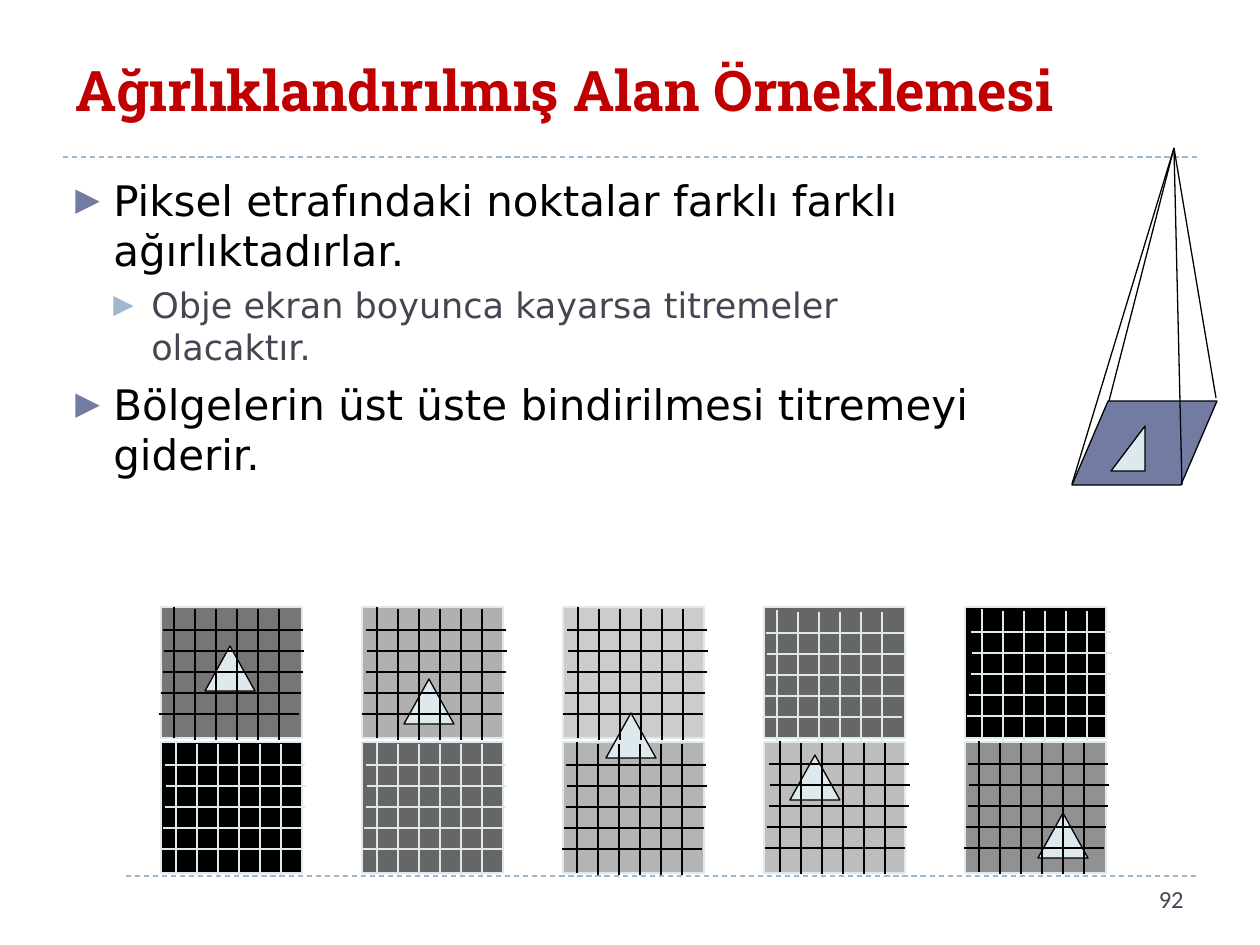
from dataclasses import dataclass

from lxml import etree
from pptx import Presentation
from pptx.dml.color import RGBColor
from pptx.enum.dml import MSO_LINE
from pptx.enum.shapes import MSO_CONNECTOR, MSO_SHAPE
from pptx.enum.text import MSO_ANCHOR, PP_ALIGN
from pptx.oxml.ns import qn
from pptx.util import Pt

PX = 914400 / 126
STRAIGHT = MSO_CONNECTOR.STRAIGHT
RECTANGLE = MSO_SHAPE.RECTANGLE
TRIANGLE = MSO_SHAPE.ISOSCELES_TRIANGLE
PARALLELOGRAM = MSO_SHAPE.PARALLELOGRAM
DASH = MSO_LINE.DASH
TOP = MSO_ANCHOR.TOP
MIDDLE = MSO_ANCHOR.MIDDLE
LEFT = PP_ALIGN.LEFT
RIGHT = PP_ALIGN.RIGHT


@dataclass(frozen=True)
class Theme:
    black: str = "000000"
    pale: str = "DDE9EC"
    red: str = "C00000"
    slate: str = "464653"
    indigo: str = "727CA3"
    sky: str = "9FB8CD"
    title_font: str = "Roboto Slab"
    body_font: str = "DejaVu Sans"
    number_font: str = "Calibri"
    title_size: int = 32
    body_size: int = 24
    detail_size: int = 20
    number_size: int = 14
    stroke: float = 0.75


THEME = Theme()

CELL_LEFT, CELL_STEP, CELL_WIDTH, CELL_HEIGHT = 161, 201, 141, 131
UPPER_ROW, LOWER_ROW = 607, 742
GRID_STEP = 21

UPPER_FILLS = [("767676", 100), ("969696", 75), ("CCCCCC", 100), ("000000", 60), ("000000", 100)]
LOWER_FILLS = [("000000", 100), ("000000", 60), ("B4B4B4", 100), ("A7A7A7", 75), ("919191", 100)]
MOVING_OBJECT = [(205, 646), (404, 679), (606, 713), (790, 755), (1038, 813)]
DARK_GRIDS = [(174, 607), (377, 607), (578, 607), (780, 741), (979, 741), (577, 742)]
PALE_GRIDS = [(377, 742), (176, 742), (777, 610), (982, 609)]

BULLETS = [
    ("Piksel etrafındaki noktalar farklı farklı ağırlıktadırlar.", 0),
    ("Obje ekran boyunca kayarsa titremeler \nolacaktır.", 1),
    ("Bölgelerin üst üste bindirilmesi titremeyi \ngiderir.", 0),
]


def px(length):
    return round(length * PX)


def rgb(color):
    return RGBColor.from_string(color)


def add_line(shapes, start, end, color, dash=None):
    line = shapes.add_connector(STRAIGHT, *map(px, (*start, *end)))
    line.line.color.rgb = rgb(color)
    line.line.width = Pt(THEME.stroke)
    if dash is not None:
        line.line.dash_style = dash
    etree.SubElement(line.element.spPr, qn("a:effectLst"))


def add_figure(shapes, preset, box, fill, outline, opacity=100, adjustment=None):
    figure = shapes.add_shape(preset, *map(px, box))
    figure.shadow.inherit = False
    figure.fill.solid()
    figure.fill.fore_color.rgb = rgb(fill)
    if opacity < 100:
        color = figure.element.spPr.find(f"{qn('a:solidFill')}/{qn('a:srgbClr')}")
        etree.SubElement(color, qn("a:alpha"), val=str(opacity * 1000))
    figure.line.color.rgb = rgb(outline)
    figure.line.width = Pt(THEME.stroke)
    if adjustment is not None:
        figure.adjustments[0] = adjustment


def add_frame(slide, box, anchor=TOP):
    frame = slide.shapes.add_textbox(*map(px, box)).text_frame
    frame.word_wrap = True
    frame.vertical_anchor = anchor
    return frame


def write(paragraph, text, *, font, size, color, bold=False, align=LEFT):
    paragraph.alignment = align
    for index, part in enumerate(text.split("\n")):
        if index:
            paragraph.add_line_break()
        run = paragraph.add_run()
        run.text = part
        run.font.name = font
        run.font.size = Pt(size)
        run.font.bold = bold
        run.font.color.rgb = rgb(color)


def add_bullet(paragraph, level, color):
    paragraph.level = level
    properties = paragraph._p.get_or_add_pPr()
    properties.set("marL", str(px(38 * (level + 1))))
    properties.set("indent", str(px(-38)))
    bullet_color = etree.SubElement(properties, qn("a:buClr"))
    etree.SubElement(bullet_color, qn("a:srgbClr"), val=color)
    etree.SubElement(properties, qn("a:buSzPct"), val="76000")
    etree.SubElement(properties, qn("a:buFont"), typeface=THEME.body_font)
    etree.SubElement(properties, qn("a:buChar"), char="▶")


def add_bullet_list(slide):
    frame = add_frame(slide, (63, 168, 1134, 680))
    styles = [
        (THEME.body_size, THEME.black, THEME.indigo, 6),
        (THEME.detail_size, THEME.slate, THEME.sky, 5),
    ]
    for index, (text, level) in enumerate(BULLETS):
        size, color, marker, gap = styles[level]
        paragraph = frame.add_paragraph() if index else frame.paragraphs[0]
        add_bullet(paragraph, level, marker)
        if index:
            paragraph.space_before = Pt(gap)
        write(paragraph, text, font=THEME.body_font, size=size, color=color)


def add_cells(slide):
    for top, fills in ((LOWER_ROW, LOWER_FILLS), (UPPER_ROW, UPPER_FILLS)):
        for column, (fill, opacity) in enumerate(fills):
            box = (CELL_LEFT + column * CELL_STEP, top, CELL_WIDTH, CELL_HEIGHT)
            add_figure(slide.shapes, RECTANGLE, box, fill, THEME.pale, opacity)


def add_pyramid(slide):
    pyramid = slide.shapes.add_group_shape().shapes
    add_figure(pyramid, PARALLELOGRAM, (1072, 401, 145, 84), THEME.indigo, THEME.black,
               adjustment=0.43)
    for corner in ((1072, 484), (1109, 401), (1182, 485), (1216, 398)):
        add_line(pyramid, (1174, 148), corner, THEME.black)
    add_figure(slide.shapes, TRIANGLE, (1111, 426, 34, 45), THEME.pale, THEME.black,
               adjustment=1)


def add_grid(slide, left, top, color):
    grid = slide.shapes.add_group_shape().shapes
    for column in range(6):
        x = left + column * GRID_STEP
        y = top + (2 if column else 0)
        add_line(grid, (x, y), (x, y + 131), color)
    for row, offset in enumerate((-11, -10, -11, -13, -15)):
        x = left + offset
        y = top + 23 + row * GRID_STEP
        add_line(grid, (x, y), (x + 140, y), color)


def main():
    presentation = Presentation()
    presentation.slide_width = px(1260)
    presentation.slide_height = px(945)
    slide = presentation.slides.add_slide(presentation.slide_layouts[6])

    add_line(slide.shapes, (126, 876), (1197, 876), THEME.sky, DASH)
    add_line(slide.shapes, (63, 157), (1197, 157), THEME.sky, DASH)
    add_bullet_list(slide)
    title = add_frame(slide, (63, 21, 1134, 136), MIDDLE)
    write(title.paragraphs[0], "Ağırlıklandırılmış Alan Örneklemesi", font=THEME.title_font,
          size=THEME.title_size, color=THEME.red, bold=True)
    number = add_frame(slide, (902, 878, 294, 50))
    write(number.paragraphs[0], "92", font=THEME.number_font, size=THEME.number_size,
          color=THEME.slate, align=RIGHT)

    add_cells(slide)
    for left, top in MOVING_OBJECT:
        add_figure(slide.shapes, TRIANGLE, (left, top, 50, 45), THEME.pale, THEME.black)
    add_pyramid(slide)
    for color, origins in ((THEME.black, DARK_GRIDS), (THEME.pale, PALE_GRIDS)):
        for left, top in origins:
            add_grid(slide, left, top, color)

    presentation.save("out.pptx")


if __name__ == "__main__":
    main()
